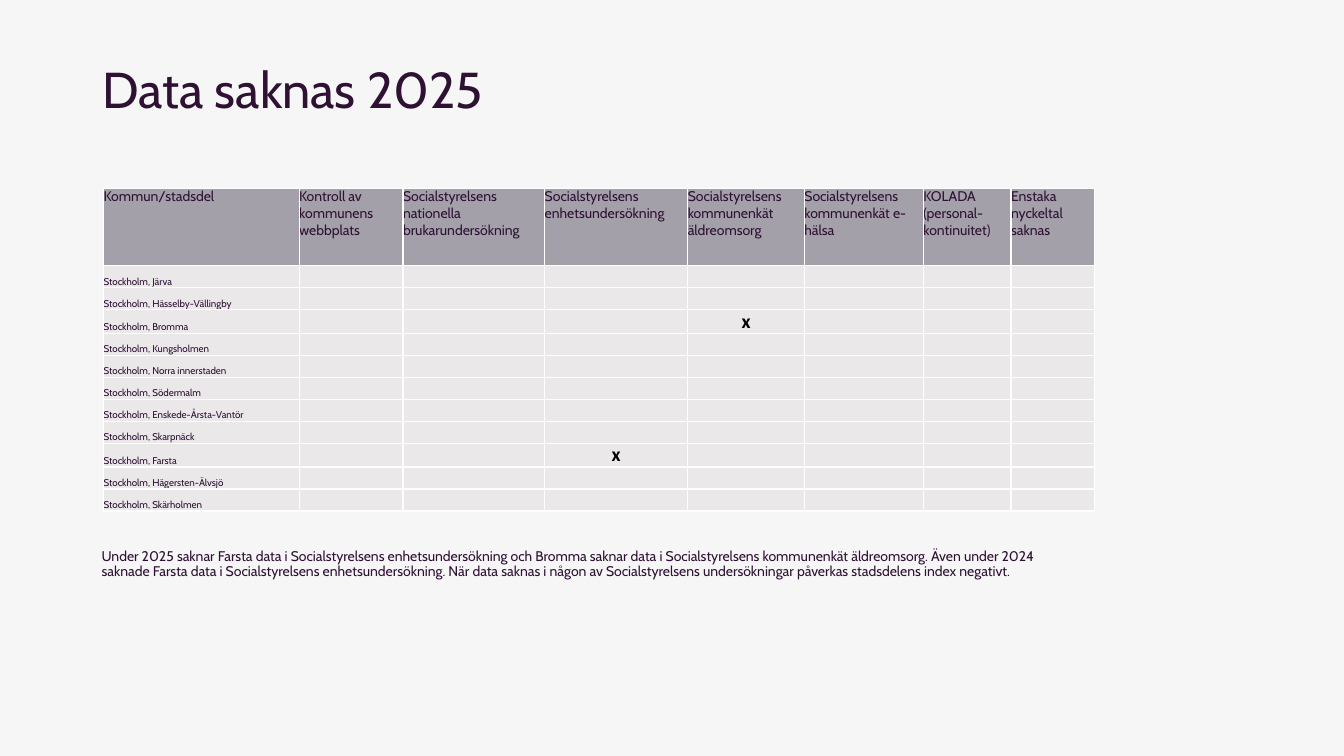
import pptx
import pptx.util
import pptx.dml.color
import pptx.enum.text
import pptx.oxml.ns
import lxml.etree

Pt = pptx.util.Pt
RGB = pptx.dml.color.RGBColor
Align = pptx.enum.text.PP_ALIGN
Anchor = pptx.enum.text.MSO_ANCHOR
etree = lxml.etree
qn = pptx.oxml.ns.qn

PLUM = RGB(0x2E, 0x11, 0x33)
BLACK = RGB(0, 0, 0)
WHITE = RGB(0xFF, 0xFF, 0xFF)
GREY = RGB(0xA4, 0xA0, 0xAA)
PALE = RGB(0xEB, 0xE8, 0xEA)
BACK = RGB(0xF7, 0xF6, 0xF7)

HEADS = [
    ("Kommun/stadsdel", 139.7),
    ("Kontroll av kommunens webbplats", 74.2),
    ("Socialstyrelsens nationella brukarundersökning", 101.2),
    ("Socialstyrelsens enhetsundersökning", 102.2),
    ("Socialstyrelsens kommunenkät äldreomsorg", 83.3),
    ("Socialstyrelsens kommunenkät e-hälsa", 85),
    ("KOLADA (personal-kontinuitet)", 62.7),
    ("Enstaka nyckeltal saknas", 59.8),
]
AREAS = ["Järva", "Hässelby-Vällingby", "Bromma", "Kungsholmen",
         "Norra innerstaden", "Södermalm", "Enskede-Årsta-Vantör",
         "Skarpnäck", "Farsta", "Hägersten-Älvsjö", "Skärholmen"]
MISSING = {("Bromma", 4), ("Farsta", 3)}
HEAD_H, ROW_H = 55.2, 15.7
NOTE = ("Under 2025 saknar Farsta data i Socialstyrelsens enhetsundersökning "
        "och Bromma saknar data i Socialstyrelsens kommunenkät äldreomsorg. "
        "Även under 2024 saknade Farsta data i Socialstyrelsens "
        "enhetsundersökning. När data saknas i någon av Socialstyrelsens "
        "undersökningar påverkas stadsdelens index negativt.")


def set_font(para, size, color=PLUM, name="Cabin", bold=False):
    font = para.font
    font.size, font.name, font.bold = Pt(size), name, bold
    font.color.rgb = color


def add_text(slide, box, text, size):
    frame = slide.shapes.add_textbox(*map(Pt, box)).text_frame
    frame.word_wrap = True
    para = frame.paragraphs[0]
    para.text = text
    para.line_spacing = 0.9
    set_font(para, size)


def add_edges(cell):
    """Draw a thin white line on all four sides of the cell."""
    props = cell._tc.get_or_add_tcPr()
    for spot, side in enumerate(("a:lnL", "a:lnR", "a:lnT", "a:lnB")):
        line = etree.Element(qn(side), w=str(int(Pt(1))))
        fill = etree.SubElement(line, qn("a:solidFill"))
        etree.SubElement(fill, qn("a:srgbClr"), val=str(WHITE))
        props.insert(spot, line)


def fill_cell(cell, text, back, anchor, size, **style):
    cell.margin_left = cell.margin_right = 0
    cell.margin_top = cell.margin_bottom = 0
    cell.vertical_anchor = anchor
    cell.fill.solid()
    cell.fill.fore_color.rgb = back
    add_edges(cell)
    cell.text = text
    para = cell.text_frame.paragraphs[0]
    set_font(para, size, **style)
    return para


def add_grid(slide, left, top):
    width = sum(wide for _, wide in HEADS)
    height = HEAD_H + ROW_H * len(AREAS)
    table = slide.shapes.add_table(
        len(AREAS) + 1, len(HEADS),
        Pt(left), Pt(top), Pt(width), Pt(height)).table
    table.first_row = table.horz_banding = False
    table.rows[0].height = Pt(HEAD_H)
    for col, (head, wide) in enumerate(HEADS):
        table.columns[col].width = Pt(wide)
        fill_cell(table.cell(0, col), head, GREY, Anchor.TOP, 10)
    for row, area in enumerate(AREAS, 1):
        table.rows[row].height = Pt(ROW_H)
        for col in range(len(HEADS)):
            cell = table.cell(row, col)
            if (area, col) in MISSING:
                para = fill_cell(cell, "x", PALE, Anchor.BOTTOM, 14,
                                 color=BLACK, name="Calibri", bold=True)
                para.alignment = Align.CENTER
            else:
                text = "" if col else f"Stockholm, {area}"
                fill_cell(cell, text, PALE, Anchor.BOTTOM, 7)


def main():
    deck = pptx.Presentation()
    deck.slide_width, deck.slide_height = Pt(960), Pt(540)
    slide = deck.slides.add_slide(deck.slide_layouts[6])
    slide.background.fill.solid()
    slide.background.fill.fore_color.rgb = BACK
    add_grid(slide, 74, 134.6)
    add_text(slide, (66.2, 43.2, 828, 59.8), "Data saknas 2025", 36)
    add_text(slide, (65.5, 388.8, 707.8, 51.1), NOTE, 10)
    deck.save("out.pptx")


if __name__ == "__main__":
    main()
